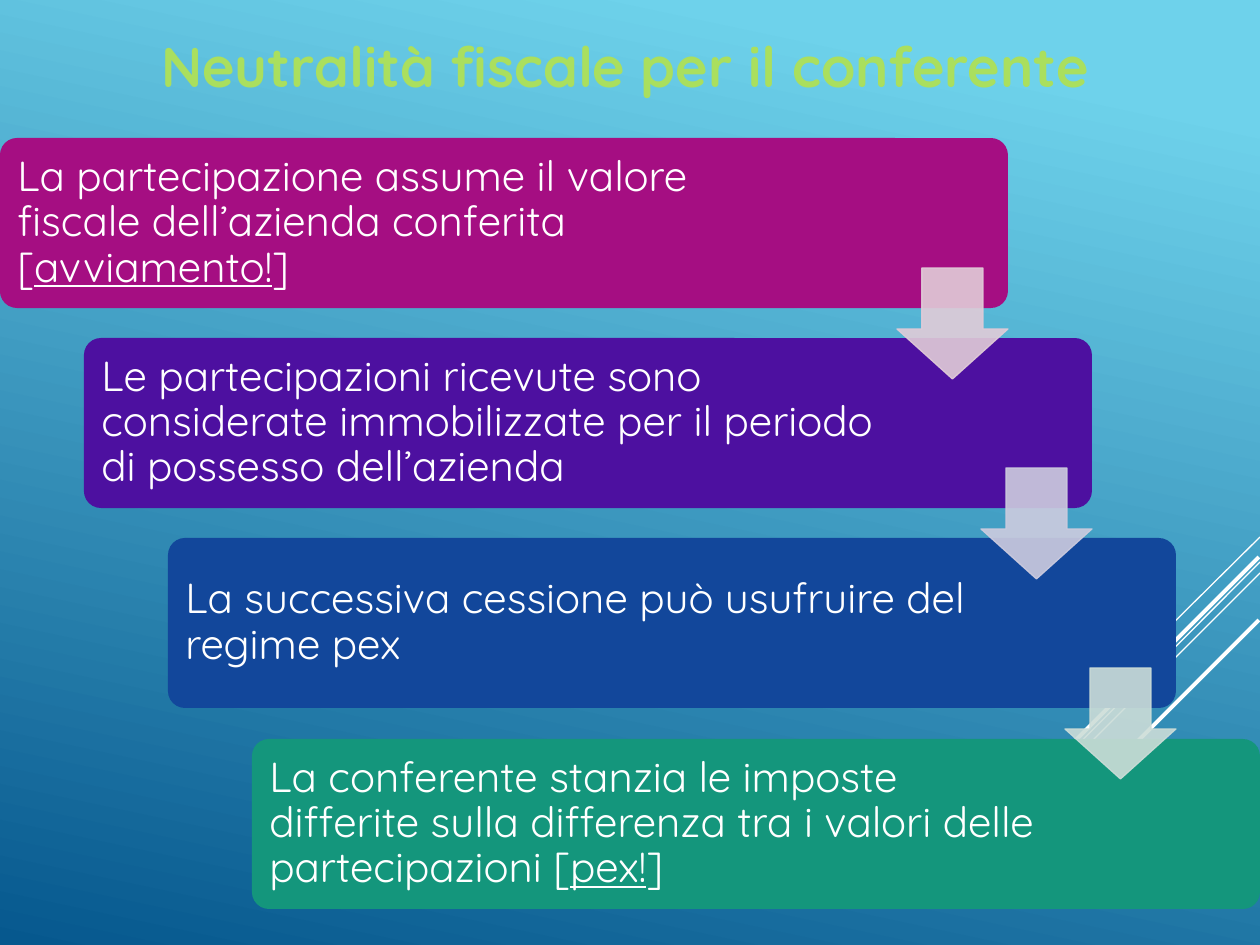
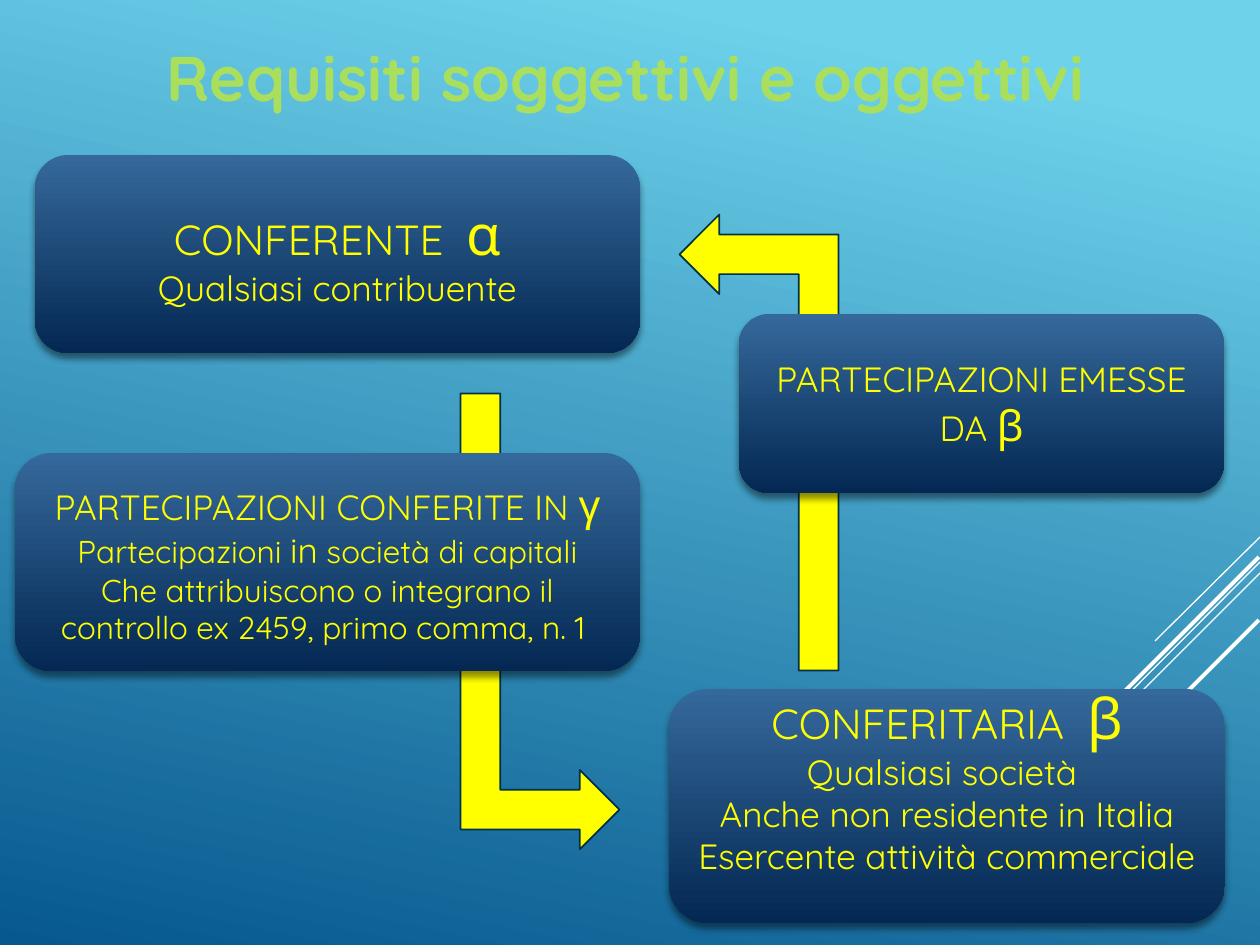
from pptx import Presentation
from pptx.dml.color import RGBColor
from pptx.enum.shapes import MSO_CONNECTOR, MSO_SHAPE
from pptx.enum.text import MSO_ANCHOR, MSO_AUTO_SIZE, PP_ALIGN
from pptx.oxml.ns import qn
from pptx.util import Pt
from lxml import etree

ROUND = MSO_SHAPE.ROUNDED_RECTANGLE
DOWN = MSO_SHAPE.DOWN_ARROW
BENT = MSO_SHAPE.BENT_UP_ARROW
LINE = MSO_CONNECTOR.STRAIGHT
MIDDLE = MSO_ANCHOR.MIDDLE
FIXED = MSO_AUTO_SIZE.NONE
LEFT, CENTER = PP_ALIGN.LEFT, PP_ALIGN.CENTER

FONT = "Quicksand"
WHITE, YELLOW, LIME, NAVY = "FFFFFF", "FFFF00", "AADF5E", "043148"
SKY = ("6ED2EB", "06588E")
DEEP = ("35699B", "042853")
RAYS = [
    (1260, 537, 1155, 641, 0.75),
    (1260, 562, 920, 903, 0.75),
    (1260, 573, 1043, 790, 0.75),
    (1259, 557, 1061, 755, 2.25),
    (1259, 620, 1115, 764, 2.25),
]


def px(n):
    return round(n * 914400 / 126)


def rgb(code):
    return RGBColor.from_string(code)


def blend(fill, pair, start, angle):
    fill.gradient()
    fill.gradient_angle = angle
    for stop, code, pos in zip(fill.gradient_stops, pair, (start, 1)):
        stop.color.rgb = rgb(code)
        stop.position = pos


class Deck:
    def __init__(self):
        self.prs = Presentation()
        self.prs.slide_width, self.prs.slide_height = px(1260), px(945)
        blend(self.prs.slide_master.background.fill, SKY, 0.1, 258)
        self.slide = None

    def page(self, title, top, size):
        self.slide = self.prs.slides.add_slide(self.prs.slide_layouts[5])
        head = self.slide.shapes.title
        head.left, head.top, head.width, head.height = map(px, (25, top, 1201, 79))
        self.text(head, [[(title, size)]], LIME, CENTER, bold=True)
        for ray in RAYS:
            self.ray(*ray)

    def ray(self, x1, y1, x2, y2, width):
        line = self.slide.shapes.add_connector(LINE, *map(px, (x1, y1, x2, y2)))
        line.line.color.rgb = rgb(WHITE)
        line.line.width = Pt(width)
        etree.SubElement(line._element.spPr, qn("a:effectLst"))

    def shape(self, kind, area, fill=None, edge=None, width=1, adj=(), turn=0):
        item = self.slide.shapes.add_shape(kind, *map(px, area))
        item.shadow.inherit = False
        item.rotation = turn
        for i, value in enumerate(adj):
            item.adjustments[i] = value
        if fill:
            item.fill.solid()
            item.fill.fore_color.rgb = rgb(fill)
        if edge:
            item.line.color.rgb = rgb(edge)
            item.line.width = Pt(width)
        else:
            item.line.fill.background()
        return item

    def arrow(self, area, code):
        item = self.shape(DOWN, area, code, code, 0.75, (0.55, 0.45))
        for tint in item._element.spPr.iter(qn("a:srgbClr")):
            etree.SubElement(tint, qn("a:alpha"), val="90000")

    def bend(self, area, turn):
        self.shape(BENT, area, YELLOW, NAVY, adj=(0.25,) * 3, turn=turn)

    def card(self, area, paras, foot=6):
        item = self.shape(ROUND, area)
        blend(item.fill, DEEP, 0, 270)
        glow = item._element.spPr.find(qn("a:effectLst"))
        shade = etree.SubElement(
            glow, qn("a:outerShdw"), blurRad=str(Pt(4)), dist=str(Pt(3)),
            dir="5400000", rotWithShape="0")
        tint = etree.SubElement(shade, qn("a:srgbClr"), val="000000")
        etree.SubElement(tint, qn("a:alpha"), val="46000")
        self.text(item, paras, YELLOW, CENTER)
        item.text_frame.margin_bottom = px(foot)

    def label(self, area, runs):
        box = self.slide.shapes.add_textbox(*map(px, area))
        self.text(box, [runs], WHITE, LEFT, space=0.9)

    def text(self, item, paras, code, align, bold=False, space=1.0):
        frame = item.text_frame
        frame.word_wrap = True
        frame.auto_size = FIXED
        frame.vertical_anchor = MIDDLE
        for i, runs in enumerate(paras):
            para = frame.add_paragraph() if i else frame.paragraphs[0]
            para.alignment = align
            para.line_spacing = space
            for words, size, *under in runs:
                run = para.add_run()
                run.text = words
                font = run.font
                font.name, font.size, font.bold = FONT, Pt(size), bold
                font.color.rgb = rgb(code)
                if under:
                    font.underline = True


def steps(deck):
    deck.page("Neutralità fiscale per il conferente", 26, 32)
    rows = [
        ("A50E82", 810, [
            ("La partecipazione assume il valore fiscale dell’azienda conferita [", 24),
            ("avviamento!", 24, True), ("]", 24)]),
        ("4D10A0", 804, [
            ("Le partecipazioni ricevute sono considerate immobilizzate "
             "per il periodo di possesso dell’azienda", 24)]),
        ("12479B", 805, [
            ("La successiva cessione può usufruire del regime pex", 24)]),
        ("14967C", 804, [
            ("La conferente stanzia le imposte differite sulla differenza "
             "tra i valori delle partecipazioni [", 24),
            ("pex!", 24, True), ("]", 24)]),
    ]
    spots = [(84 * i, 138 + 601 * i // 3) for i in range(len(rows))]
    for (x, y), (code, width, runs) in zip(spots, rows):
        deck.shape(ROUND, (x, y, 1008, 170), code, adj=(0.1,))
        deck.label((x + 5, y + 5, width, 160), runs)
    for (x, y), code in zip(spots, ("E1CCD8", "CDCCDF", "CCDDD8")):
        deck.arrow((x + 897, y + 130, 111, 111), code)


def needs(deck):
    deck.page("Requisiti soggettivi e oggettivi", 37, 36)
    deck.card((35, 155, 605, 198), [
        [("CONFERENTE  ", 24), ("α", 32)],
        [("Qualsiasi contribuente", 20)],
    ])
    deck.card((669, 689, 556, 234), [
        [("CONFERITARIA  ", 24), ("β", 32)],
        [("Qualsiasi società ", 20)],
        [("Anche non residente in Italia", 20)],
        [("Esercente attività commerciale", 20)],
    ], foot=58)
    deck.bend((312, 542, 456, 159), 90)
    deck.card((15, 453, 625, 218), [
        [("PARTECIPAZIONI CONFERITE IN ", 20), ("γ", 24)],
        [("Partecipazioni ", 18), ("in", 20), (" società di capitali", 18)],
        [("Che attribuiscono o integrano il controllo ex 2459, primo comma, n. 1 ", 18)],
    ])
    deck.bend((531, 363, 456, 159), 270)
    deck.card((739, 314, 485, 179), [
        [("PARTECIPAZIONI EMESSE DA ", 20), ("β", 24)],
    ])


def main():
    deck = Deck()
    steps(deck)
    needs(deck)
    deck.prs.save("out.pptx")


if __name__ == "__main__":
    main()
